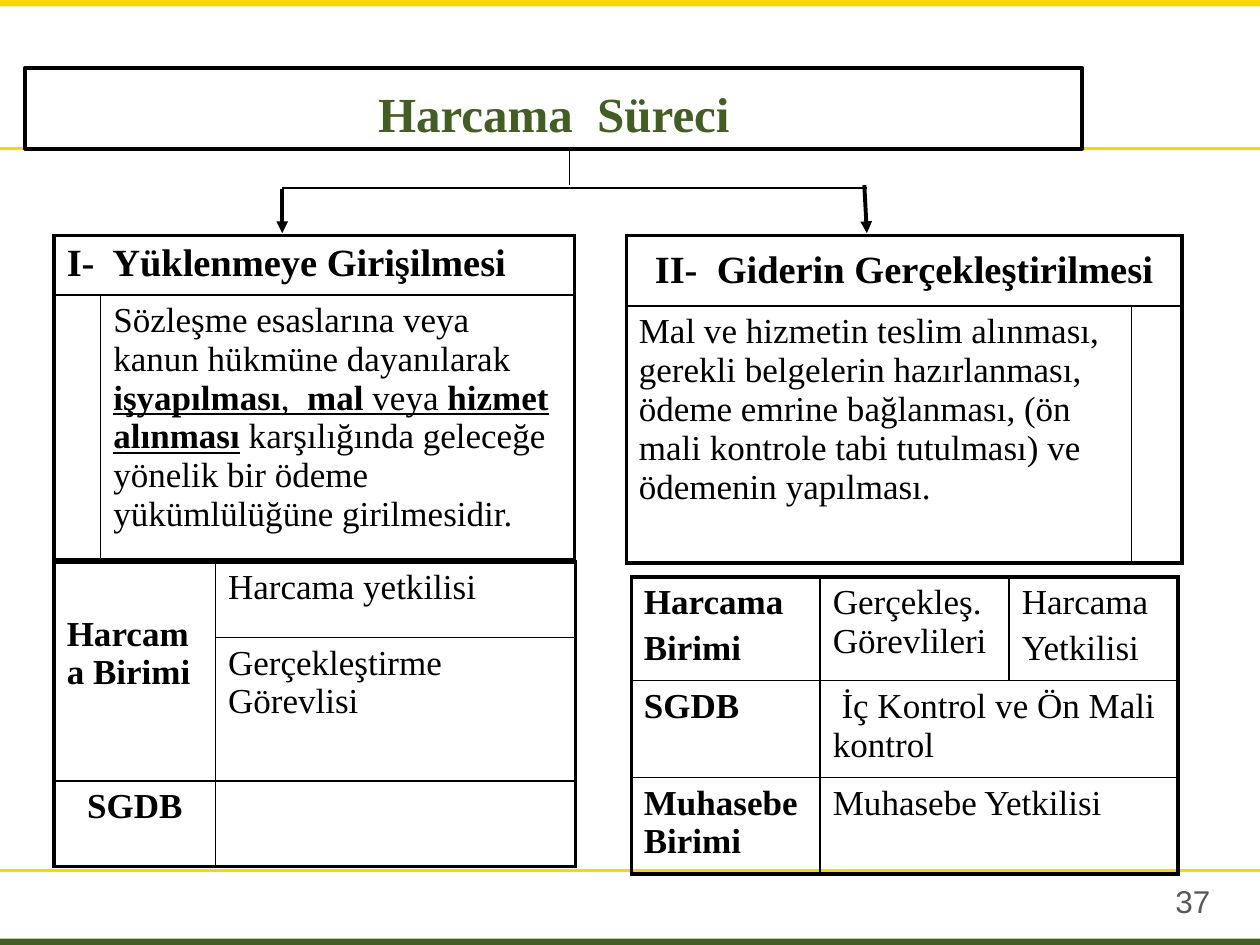
from dataclasses import dataclass

import lxml.etree
import pptx
import pptx.dml.color
import pptx.enum.shapes
import pptx.enum.text
import pptx.oxml
import pptx.oxml.ns
import pptx.util

Inches, Pt = pptx.util.Inches, pptx.util.Pt
RGB = pptx.dml.color.RGBColor
Align = pptx.enum.text.PP_ALIGN
Anchor = pptx.enum.text.MSO_ANCHOR
qn = pptx.oxml.ns.qn


@dataclass(frozen=True)
class Theme:
    yellow = RGB.from_string("F9D702")
    green = RGB.from_string("435E23")
    black = RGB.from_string("000000")
    gray = RGB.from_string("595959")
    serif = "Times New Roman"
    sans = "Arial"
    title = Pt(28)
    heading = Pt(22)
    body = Pt(20)
    number = Pt(18)
    thick = Pt(2.25)
    thin = Pt(1)
    rule = Pt(1.5)


theme = Theme()


def add_line(start, end, color, width, arrow=False):
    line = slide.shapes.add_connector(
        pptx.enum.shapes.MSO_CONNECTOR.STRAIGHT, *map(Inches, start + end))
    line.line.color.rgb = color
    line.line.width = width
    if arrow:
        lxml.etree.SubElement(line.line._get_or_add_ln(), qn("a:tailEnd"), type="triangle")
    lxml.etree.SubElement(line._element.spPr, qn("a:effectLst"))


def set_borders(cell, widths):
    """Draw the left, right, top and bottom borders of a cell."""
    properties = cell._tc.get_or_add_tcPr()
    for side, width in zip("LRTB", widths):
        properties.append(pptx.oxml.parse_xml(
            f'<a:ln{side} xmlns:a="http://schemas.openxmlformats.org/drawingml/2006/main" '
            f'w="{int(width)}"><a:solidFill><a:srgbClr val="{theme.black}"/>'
            f'</a:solidFill></a:ln{side}>'))


presentation = pptx.Presentation()
presentation.slide_width = Inches(10)
presentation.slide_height = Inches(7.5)
slide = presentation.slides.add_slide(presentation.slide_layouts[6])

# Page frame
for top, color in ((0, theme.yellow), (7.45, theme.green)):
    band = slide.shapes.add_shape(
        pptx.enum.shapes.MSO_SHAPE.RECTANGLE, 0, Inches(top), Inches(10), Inches(0.05))
    band.shadow.inherit = False
    band.fill.solid()
    band.fill.fore_color.rgb = color
    band.line.fill.background()
for y in (1.18, 6.91):
    add_line((0, y), (10, y), theme.yellow, theme.rule)

# Page number and title
number_box = slide.shapes.add_textbox(Inches(9.23), Inches(6.95), Inches(0.78), Inches(0.4))
title_box = slide.shapes.add_textbox(Inches(0.2), Inches(0.54), Inches(8.39), Inches(0.64))
title_box.fill.solid()
title_box.fill.fore_color.rgb = RGB(255, 255, 255)
title_box.line.color.rgb = theme.black
title_box.line.width = theme.thick
title_box.text_frame.vertical_anchor = Anchor.BOTTOM
for box, text, font, size, color, bold, align in (
    (number_box, "37", theme.sans, theme.number, theme.gray, False, Align.LEFT),
    (title_box, "Harcama  Süreci", theme.serif, theme.title, theme.green, True, Align.CENTER),
):
    box.text_frame.word_wrap = True
    paragraph = box.text_frame.paragraphs[0]
    paragraph.text = text
    paragraph.alignment = align
    paragraph.font.name = font
    paragraph.font.size = size
    paragraph.font.color.rgb = color
    paragraph.font.bold = bold

# Branches from the title to the two stages
add_line((4.52, 1.18), (4.52, 1.47), theme.black, theme.thin)
add_line((2.24, 1.49), (6.88, 1.49), theme.black, theme.thin)
add_line((2.24, 1.5), (2.24, 1.85), theme.black, theme.thick, arrow=True)
add_line((6.86, 1.47), (6.88, 1.85), theme.black, theme.thick, arrow=True)

# Runs of the mixed paragraph: text, bold, underline
commitment = [
    ("Sözleşme esaslarına veya kanun hükmüne dayanılarak ", False, False),
    ("işyapılması", True, True), (",  ", False, True), ("mal", True, True),
    (" veya ", False, True), ("hizmet", True, True), (" ", False, True),
    ("alınması", True, True),
    (" karşılığında geleceğe yönelik bir ödeme yükümlülüğüne girilmesidir.", False, False),
]
spending = ("Mal ve hizmetin teslim alınması, gerekli belgelerin hazırlanması, ödeme emrine "
            "bağlanması, (ön mali kontrole tabi tutulması) ve ödemenin yapılması.")

# Each table: left, top, column widths, row heights, merged ranges,
# and cells by (row, column): text, size, bold, alignment, anchor, top margin
plain = (theme.body, False, Align.LEFT, Anchor.TOP, 0.05)
strong = (theme.body, True, Align.LEFT, Anchor.TOP, 0.05)
tables = [
    (0.43, 1.87, (0.37, 3.76), (0.47, 2.1), [(0, 0, 0, 1)], {
        (0, 0): ("I-  Yüklenmeye Girişilmesi", theme.heading, True, Align.LEFT, Anchor.TOP, 0.05),
        (1, 1): (commitment, *plain),
    }),
    (0.43, 4.46, (1.28, 2.86), (0.6, 1.08, 0.68), [(0, 0, 1, 0)], {
        (0, 0): ("Harcama Birimi", theme.body, True, Align.LEFT, Anchor.TOP, 0.42),
        (0, 1): ("Harcama yetkilisi", *plain),
        (1, 1): ("Gerçekleştirme Görevlisi", *plain),
        (2, 0): ("SGDB", theme.body, True, Align.CENTER, Anchor.TOP, 0.05),
    }),
    (4.97, 1.87, (4.01, 0.4), (0.56, 2.04), [(0, 0, 0, 1)], {
        (0, 0): ("II-  Giderin Gerçekleştirilmesi", theme.heading, True, Align.CENTER,
                 Anchor.MIDDLE, 0.05),
        (1, 0): (spending, *plain),
    }),
    (5.01, 4.58, (1.5, 1.5, 1.34), (0.77, 0.72, 0.72), [(1, 1, 1, 2), (2, 1, 2, 2)], {
        (0, 0): ("Harcama\nBirimi", *strong),
        (0, 1): ("Gerçekleş. Görevlileri", *plain),
        (0, 2): ("Harcama\nYetkilisi", *plain),
        (1, 0): ("SGDB", *strong),
        (1, 1): (" İç Kontrol ve Ön Mali kontrol", *plain),
        (2, 0): ("Muhasebe Birimi", *strong),
        (2, 1): ("Muhasebe Yetkilisi", *plain),
    }),
]

for left, top, widths, heights, merges, contents in tables:
    table = slide.shapes.add_table(
        len(heights), len(widths), Inches(left), Inches(top),
        Inches(sum(widths)), Inches(sum(heights))).table
    table.first_row = table.horz_banding = False
    for column, width in zip(table.columns, widths):
        column.width = Inches(width)
    for row, height in zip(table.rows, heights):
        row.height = Inches(height)
    for first_row, first_column, last_row, last_column in merges:
        table.cell(first_row, first_column).merge(table.cell(last_row, last_column))

    for r in range(len(heights)):
        for c in range(len(widths)):
            cell = table.cell(r, c)
            outer = (c == 0, c + cell.span_width == len(widths),
                     r == 0, r + cell.span_height == len(heights))
            set_borders(cell, [theme.thick if edge else theme.thin for edge in outer])
            cell.fill.background()

    for position, (text, size, bold, align, anchor, margin) in contents.items():
        cell = table.cell(*position)
        cell.vertical_anchor = anchor
        cell.margin_top = Inches(margin)
        if isinstance(text, str):
            cell.text = text
        else:
            for words, run_bold, underline in text:
                run = cell.text_frame.paragraphs[0].add_run()
                run.text = words
                run.font.bold = run_bold
                run.font.underline = underline
        for index, paragraph in enumerate(cell.text_frame.paragraphs):
            paragraph.alignment = align
            if index:
                paragraph.space_before = Pt(4)
            paragraph.font.name = theme.serif
            paragraph.font.size = size
            paragraph.font.color.rgb = theme.black
            paragraph.font.bold = bold

presentation.save("out.pptx")
